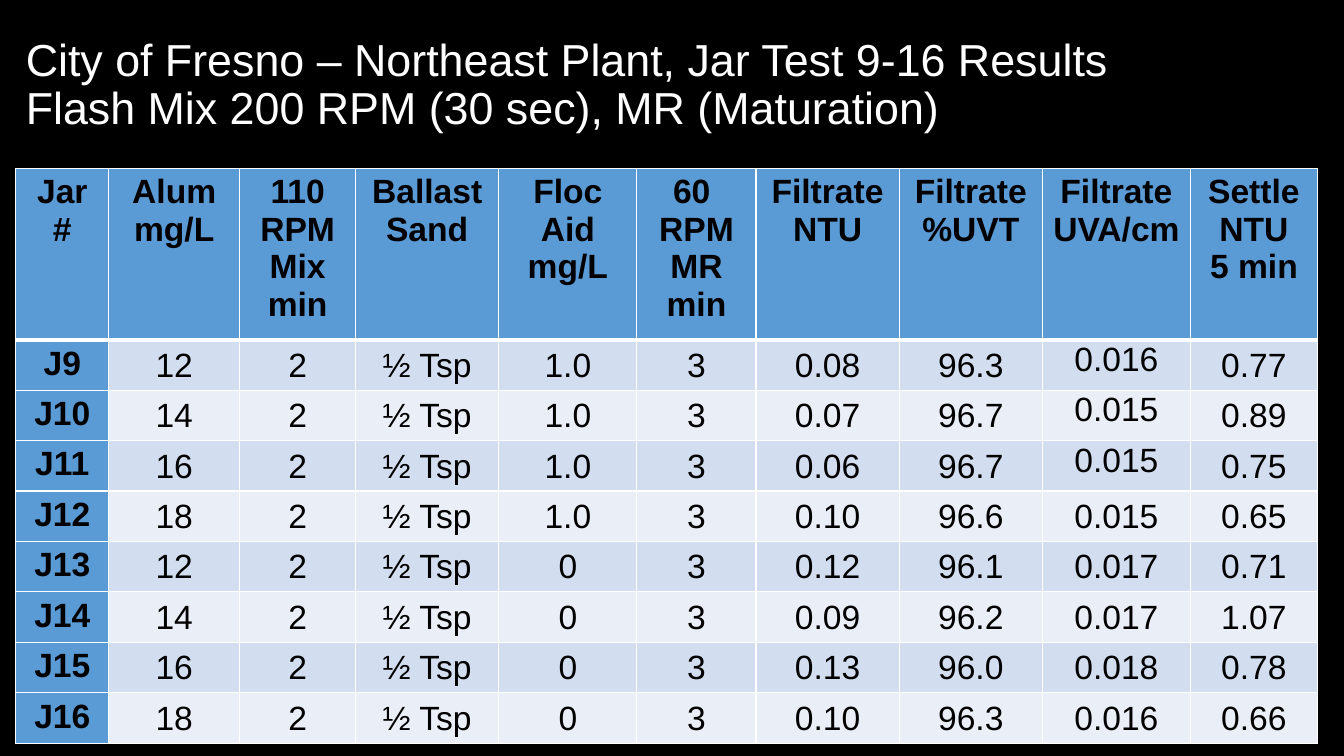
import pptx
import pptx.util
import pptx.dml.color
import pptx.enum.text
import pptx.oxml
import pptx.oxml.ns

Cm = pptx.util.Cm
Pt = pptx.util.Pt
Mid = pptx.enum.text.MSO_ANCHOR.MIDDLE
hues = {"back": "000000", "ink": "000000", "white": "FFFFFF",
        "head": "5B9BD5", "odd": "D2DEEF", "even": "EAEFF7"}


def tint(name):
    return pptx.dml.color.RGBColor.from_string(hues[name])


def style(frame, size, hue, bold):
    for para in frame.paragraphs:
        for run in para.runs:
            run.font.name = "Arial"
            run.font.size = Pt(size)
            run.font.bold = bold
            run.font.color.rgb = tint(hue)


deck = pptx.Presentation()
deck.slide_width = Cm(33.87)
deck.slide_height = Cm(19.05)
slide = deck.slides.add_slide(deck.slide_layouts[6])
slide.background.fill.solid()
slide.background.fill.fore_color.rgb = tint("back")

title = slide.shapes.add_textbox(Cm(0.4), Cm(0.33), Cm(31.14), Cm(3.68)).text_frame
title.word_wrap = True
title.vertical_anchor = Mid
title.text = ("City of Fresno – Northeast Plant, Jar Test 9-16 Results\v"
              "Flash Mix 200 RPM (30 sec), MR (Maturation)")
title.paragraphs[0].line_spacing = 0.9
style(title, 32, "white", False)

heads = ["Jar\v#", "Alum\nmg/L", "110 RPM\nMix\nmin", "Ballast\nSand",
         "Floc\nAid\nmg/L", "60 \nRPM\nMR\nmin", "Filtrate\nNTU",
         "Filtrate\n%UVT", "Filtrate\nUVA/cm", "Settle\nNTU\n5 min"]
tests = [
    ("J9", "12", "1.0", "0.08", "96.3", "0.016", "0.77"),
    ("J10", "14", "1.0", "0.07", "96.7", "0.015", "0.89"),
    ("J11", "16", "1.0", "0.06", "96.7", "0.015", "0.75"),
    ("J12", "18", "1.0", "0.10", "96.6", "0.015", "0.65"),
    ("J13", "12", "0", "0.12", "96.1", "0.017", "0.71"),
    ("J14", "14", "0", "0.09", "96.2", "0.017", "1.07"),
    ("J15", "16", "0", "0.13", "96.0", "0.018", "0.78"),
    ("J16", "18", "0", "0.10", "96.3", "0.016", "0.66"),
]
rows = [heads]
for jar, alum, aid, ntu, uvt, uva, settle in tests:
    rows.append([jar, alum, "2", "½ Tsp", aid, "3", ntu, uvt, uva, settle])

wides = [2.34, 3.3, 2.92, 3.61, 3.48, 3, 3.61, 3.61, 3.73, 3.2]
grid = slide.shapes.add_table(len(rows), len(wides), Cm(0.4), Cm(4.24),
                              Cm(sum(wides)), Cm(9.97)).table
for col, wide in zip(grid.columns, wides):
    col.width = Cm(wide)
for r, row in enumerate(rows):
    grid.rows[r].height = Cm(1.04 if r else 1.65)
    for c, text in enumerate(row):
        cell = grid.cell(r, c)
        key = r == 0 or c == 0
        cell.text_frame.text = text
        for para in cell.text_frame.paragraphs:
            para.alignment = pptx.enum.text.PP_ALIGN.CENTER
        style(cell.text_frame, 24, "ink", key)
        if not key:
            cell.margin_left = cell.margin_right = cell.margin_top = Cm(0.03)
            cell.margin_bottom = 0
            if c != 8 or r > 3:
                cell.vertical_anchor = Mid
        props = cell._tc.get_or_add_tcPr()
        for side in "LRTB":
            thick = (r, side) in [(0, "B"), (1, "T")]
            props.append(pptx.oxml.parse_xml(
                f'<a:ln{side} {pptx.oxml.ns.nsdecls("a")} w="{Pt(3 if thick else 1)}">'
                f'<a:solidFill><a:srgbClr val="{hues["white"]}"/></a:solidFill></a:ln{side}>'))
        cell.fill.solid()
        cell.fill.fore_color.rgb = tint("head" if key else "odd" if r % 2 else "even")

deck.save("out.pptx")
